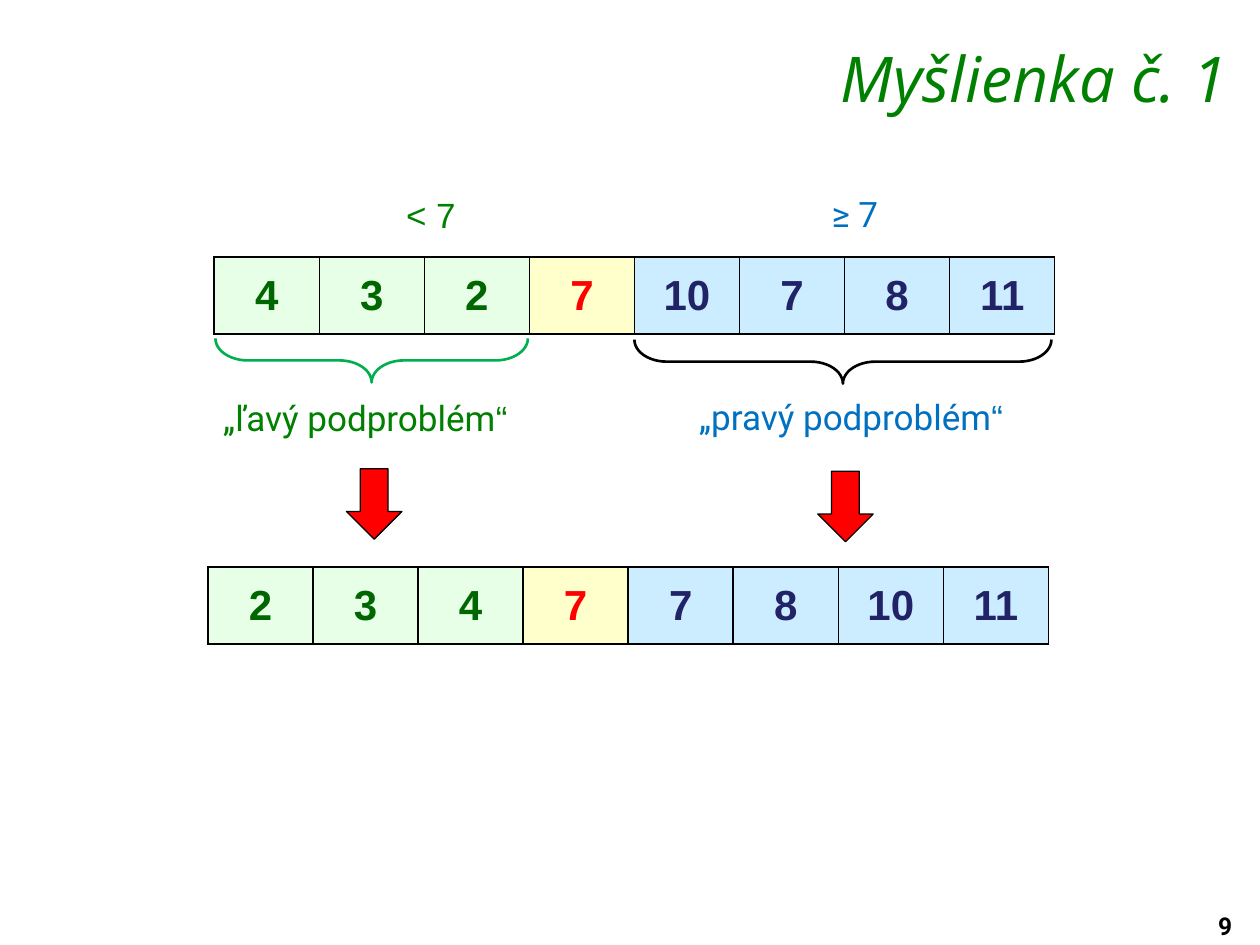
from lxml import etree
from pptx import Presentation
from pptx.dml.color import RGBColor
from pptx.enum.shapes import MSO_SHAPE
from pptx.enum.text import MSO_ANCHOR, PP_ALIGN
from pptx.oxml.ns import qn
from pptx.util import Inches, Pt

BRACE, ARROW = MSO_SHAPE.LEFT_BRACE, MSO_SHAPE.DOWN_ARROW
TOP, MIDDLE = MSO_ANCHOR.TOP, MSO_ANCHOR.MIDDLE
LEFT, CENTER, RIGHT = PP_ALIGN.LEFT, PP_ALIGN.CENTER, PP_ALIGN.RIGHT

BLACK = RGBColor(0x00, 0x00, 0x00)
RED = RGBColor(0xFF, 0x00, 0x00)
GREEN = RGBColor(0x00, 0x80, 0x00)
BLUE = RGBColor(0x00, 0x70, 0xC0)
LIME = RGBColor(0x00, 0xB0, 0x50)
LOW = (RGBColor(0x00, 0x66, 0x00), RGBColor(0xE7, 0xFF, 0xE7))
PIVOT = (RED, RGBColor(0xFF, 0xFF, 0xCC))
HIGH = (RGBColor(0x22, 0x22, 0x67), RGBColor(0xCC, 0xEC, 0xFF))

# Content
TITLE = "Myšlienka č. 1"
NUMBER = "9"
STYLES = [LOW] * 3 + [PIVOT] + [HIGH] * 4
ARRAYS = [  # left, top, values
    (1.7, 2.04, [4, 3, 2, 7, 10, 7, 8, 11]),
    (1.65, 4.5, [2, 3, 4, 7, 7, 8, 10, 11]),
]
LABELS = [  # left, top, width, colour, runs with fonts
    (1.6, 3.1, 2.6, GREEN, [("„ľavý podproblém", "Roboto"), ("“", "Arial")]),
    (5.24, 3.09, 3.03, BLUE, [("„pravý podproblém", "Roboto"), ("“", "Arial")]),
    (2.12, 1.49, 2.6, GREEN, [("< 7", "Arial")]),
    (5.27, 1.48, 3.03, BLUE, [("≥ 7", "Roboto")]),
]
BRACES = [(2.95, 2.86, 2.48, LIME), (6.69, 2.87, 3.31, BLACK)]  # centre, span
ARROWS = [(2.75, 3.72), (6.49, 3.74)]
CELL_W, CELL_H = 0.834, 0.61
BRACE_W = 0.35


def add_run(para, text, font, size, color, bold=False, italic=False):
    run = para.add_run()
    run.text = text
    run.font.name, run.font.size = font, Pt(size)
    run.font.bold, run.font.italic = bold, italic
    run.font.color.rgb = color


def add_text(slide, x, y, w, h, runs, size, color, align, bold=False):
    box = slide.shapes.add_textbox(Inches(x), Inches(y), Inches(w), Inches(h))
    box.text_frame.word_wrap = True
    para = box.text_frame.paragraphs[0]
    para.alignment = align
    for text, font in runs:
        add_run(para, text, font, size, color, bold)


def add_shape(slide, kind, x, y, w, h, line, width):
    shape = slide.shapes.add_shape(kind, Inches(x), Inches(y), Inches(w), Inches(h))
    shape.shadow.inherit = False
    shape.line.color.rgb, shape.line.width = line, Pt(width)
    return shape


def add_border(cell):
    props = cell._tc.get_or_add_tcPr()
    for side in ("a:lnL", "a:lnR", "a:lnT", "a:lnB"):
        line = etree.SubElement(props, qn(side), w=str(Pt(1)))
        fill = etree.SubElement(line, qn("a:solidFill"))
        etree.SubElement(fill, qn("a:srgbClr"), val=str(BLACK))


def add_array(slide, x, y, values):
    count = len(values)
    table = slide.shapes.add_table(1, count, Inches(x), Inches(y),
                                   Inches(CELL_W * count), Inches(CELL_H)).table
    table.first_row = table.horz_banding = False
    for i, (value, (color, back)) in enumerate(zip(values, STYLES)):
        table.columns[i].width = Inches(CELL_W)
        cell = table.cell(0, i)
        add_border(cell)
        cell.fill.solid()
        cell.fill.fore_color.rgb = back
        cell.vertical_anchor = MIDDLE
        para = cell.text_frame.paragraphs[0]
        para.alignment = CENTER
        add_run(para, str(value), "Arial", 24, color, bold=True)


def main():
    deck = Presentation()
    deck.slide_width, deck.slide_height = Inches(10), Inches(7.5)
    slide = deck.slides.add_slide(deck.slide_layouts[5])

    # Title and slide number
    title = slide.shapes.title
    title.left, title.top = Inches(2.29), Inches(0.31)
    title.width, title.height = Inches(7.55), Inches(0.58)
    frame = title.text_frame
    frame.vertical_anchor, frame.margin_top = TOP, 0
    para = frame.paragraphs[0]
    para.alignment = RIGHT
    add_run(para, TITLE, "Open Sans", 36, GREEN, italic=True)
    add_text(slide, 9.57, 7.18, 0.51, 0.33, [(NUMBER, "Roboto")],
             14, BLACK, LEFT, bold=True)

    # Arrays before and after sorting
    for x, y, values in ARRAYS:
        add_array(slide, x, y, values)

    # Braces, turned to point down
    for x, y, span, color in BRACES:
        brace = add_shape(slide, BRACE, x - BRACE_W / 2, y - span / 2,
                          BRACE_W, span, color, 1.5)
        brace.fill.background()
        brace.rotation = 270
        brace.adjustments[0] = 0.73

    # Labels
    for x, y, w, color, runs in LABELS:
        add_text(slide, x, y, w, 0.44, runs, 20, color, CENTER)

    # Arrows
    for x, y in ARROWS:
        arrow = add_shape(slide, ARROW, x, y, 0.44, 0.56, BLACK, 0.75)
        arrow.fill.solid()
        arrow.fill.fore_color.rgb = RED

    deck.save("out.pptx")


if __name__ == "__main__":
    main()
